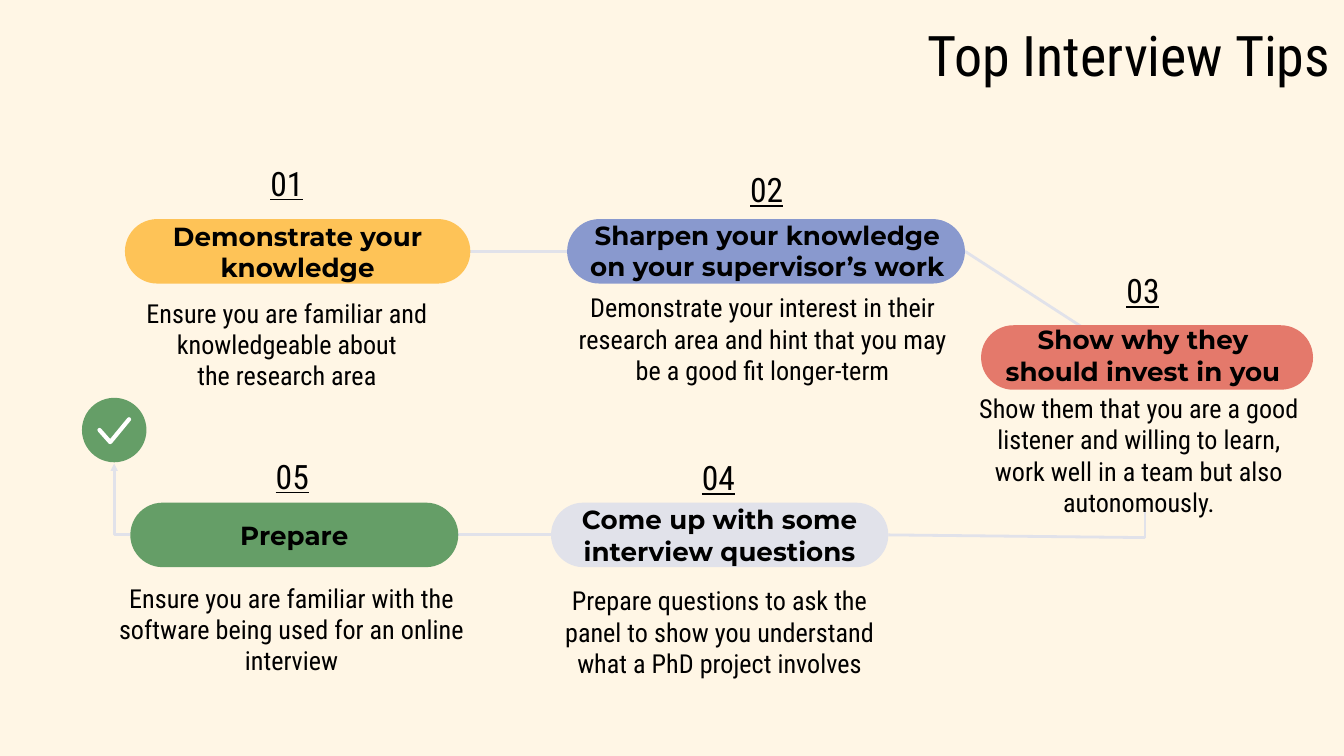
from pptx import Presentation
from pptx import util as u
from pptx.dml.color import RGBColor
from pptx.enum import shapes, text
from pptx.oxml.ns import qn
from lxml import etree

# Content: boxes are (left, top, width, height) in inches
TITLE = "Top Interview Tips"
STEPS = [
    dict(number="01", number_at=(1.84, 1.11), color="FEC357",
         heading="Demonstrate your knowledge", pill=(0.93, 1.63, 2.57),
         body="Ensure you are familiar and knowledgeable about\nthe research area",
         body_box=(0.85, 2.11, 2.57, 0.61), inset=0.1),
    dict(number="02", number_at=(5.41, 1.16), color="8999CE",
         heading="Sharpen your knowledge on your supervisor’s work", pill=(4.22, 1.63, 2.96),
         heading_box=(4.27, 1.58, 2.88, 0.57),
         body="Demonstrate your interest in their research area and hint that you may "
              "be a good fit longer-term",
         body_box=(4.14, 2.07, 3.07, 0.61), inset=0.1),
    dict(number="03", number_at=(8.21, 1.91), color="E4796B",
         heading="Show why they should invest in you", pill=(7.3, 2.42, 2.47),
         heading_box=(7.31, 2.36, 2.39, 0.57),
         body="Show them that you are a good listener and willing to learn, "
              "work well in a team but also autonomously.",
         body_box=(7.16, 2.87, 2.63, 1.04), inset=0.05),
    dict(number="04", number_at=(5.05, 3.3), color="E1E2EA",
         heading="Come up with some interview questions", pill=(4.1, 3.74, 2.51),
         body="Prepare questions to ask the panel to show you understand "
              "what a PhD project involves",
         body_box=(3.97, 4.3, 2.77, 0.81), inset=0.05),
    dict(number="05", number_at=(1.88, 3.29), color="659E67",
         heading="Prepare", pill=(0.97, 3.74, 2.44),
         body="Ensure you are familiar with the software being used for an online interview",
         body_box=(0.74, 4.23, 2.86, 0.61), inset=0.1),
]
THEME = dict(background="FFF6E5", ink="000000", line="E1E2EA", done="659E67", tick="FFFFFF",
             display="Roboto Condensed", heading="Montserrat",
             title_size=30, number_size=18, text_size=14)
PILL_HEIGHT = 0.48
LEFT, RIGHT = 1, 3  # connection sites of a pill

deck = Presentation()
deck.slide_width, deck.slide_height = u.Inches(10), u.Inches(10 * 9 / 16)
page = deck.slides.add_slide(deck.slide_layouts[6])
page.background.fill.solid()
page.background.fill.fore_color.rgb = RGBColor.from_string(THEME["background"])


def write(box, words, size=THEME["text_size"], font=THEME["display"], bold=False,
          underline=False, align=text.PP_ALIGN.CENTER, anchor=text.MSO_ANCHOR.MIDDLE,
          inset=(0.1, 0.1)):
    frame = box.text_frame
    frame.word_wrap = True
    frame.vertical_anchor = anchor
    frame.margin_left = frame.margin_right = u.Inches(inset[0])
    frame.margin_top = frame.margin_bottom = u.Inches(inset[1])
    para = frame.paragraphs[0]
    para.alignment = align
    for index, part in enumerate(words.split("\n")):
        if index:
            para.add_line_break()
        span = para.add_run()
        span.text = part
        span.font.name, span.font.size = font, u.Pt(size)
        span.font.bold, span.font.underline = bold, underline
        span.font.color.rgb = RGBColor.from_string(THEME["ink"])


def add_box(left, top, width, height):
    return page.shapes.add_textbox(*map(u.Inches, (left, top, width, height)))


def add_filled(kind, left, top, width, height, color):
    shape = page.shapes.add_shape(kind, *map(u.Inches, (left, top, width, height)))
    shape.shadow.inherit = False
    shape.fill.solid()
    shape.fill.fore_color.rgb = RGBColor.from_string(color)
    shape.line.fill.background()
    return shape


def add_line(start, end, begin=None, finish=None, kind=shapes.MSO_CONNECTOR.STRAIGHT):
    """Draw a line behind everything; begin and finish are (shape, site)."""
    line = page.shapes.add_connector(kind, *map(u.Inches, start + end))
    if begin:
        line.begin_connect(*begin)
    if finish:
        line.end_connect(*finish)
    line.line.color.rgb = RGBColor.from_string(THEME["line"])
    line.line.width = u.Pt(1.5)
    properties = line._element.spPr
    etree.SubElement(properties, qn("a:effectLst"))
    page.shapes._spTree.insert(2, line._element)
    return properties


# Title
write(add_box(0, 0.19, 10, 0.42), TITLE, size=THEME["title_size"], align=text.PP_ALIGN.RIGHT)

# Steps: number, pill, heading (in the pill unless it has its own box), explanation
pills = {}
for step in STEPS:
    write(add_box(*step["number_at"], 0.59, 0.5), step["number"],
          size=THEME["number_size"], underline=True)
    pill = add_filled(shapes.MSO_SHAPE.ROUNDED_RECTANGLE, *step["pill"], PILL_HEIGHT,
                      step["color"])
    pill.adjustments[0] = 0.5
    own_box = step.get("heading_box")
    write(add_box(*own_box) if own_box else pill, step["heading"], font=THEME["heading"],
          bold=True, anchor=text.MSO_ANCHOR.TOP if own_box else text.MSO_ANCHOR.MIDDLE,
          inset=(0.1, 0.05) if own_box else (0, 0.1))
    write(add_box(*step["body_box"]), step["body"], anchor=text.MSO_ANCHOR.TOP,
          inset=(0.1, step["inset"]))
    pills[step["number"]] = pill

# Finish badge with tick
add_filled(shapes.MSO_SHAPE.OVAL, 0.61, 2.96, PILL_HEIGHT, PILL_HEIGHT, THEME["done"])
points = [(u.Inches(x), u.Inches(y)) for x, y in ((0.74, 3.2), (0.82, 3.29), (0.96, 3.12))]
builder = page.shapes.build_freeform(*points[0])
builder.add_line_segments(points[1:], close=False)
tick = builder.convert_to_shape()
tick.shadow.inherit = False
tick.fill.background()
tick.line.color.rgb = RGBColor.from_string(THEME["tick"])
tick.line.width = u.Pt(2.25)
stroke = tick.line._get_or_add_ln()
stroke.set("cap", "rnd")
etree.SubElement(stroke, qn("a:round"))

# Route from step to step
add_line((3.5, 1.87), (4.22, 1.87), (pills["01"], RIGHT), (pills["02"], LEFT))
add_line((7.18, 1.87), (8.37, 2.64), (pills["02"], RIGHT))
add_line((8.52, 4), (8.52, 3.81))
add_line((6.61, 3.98), (8.52, 4), (pills["04"], RIGHT))
add_line((4.1, 3.98), (3.41, 3.98), (pills["04"], LEFT), (pills["05"], RIGHT))

# Elbow arrow up to the badge
elbow = add_line((0.97, 3.98), (0.85, 3.45), kind=shapes.MSO_CONNECTOR.ELBOW)
elbow.find(qn("a:prstGeom")).set("prst", "bentConnector2")
etree.SubElement(elbow.find(qn("a:ln")), qn("a:tailEnd"), type="triangle", w="sm", len="sm")

deck.save("out.pptx")
